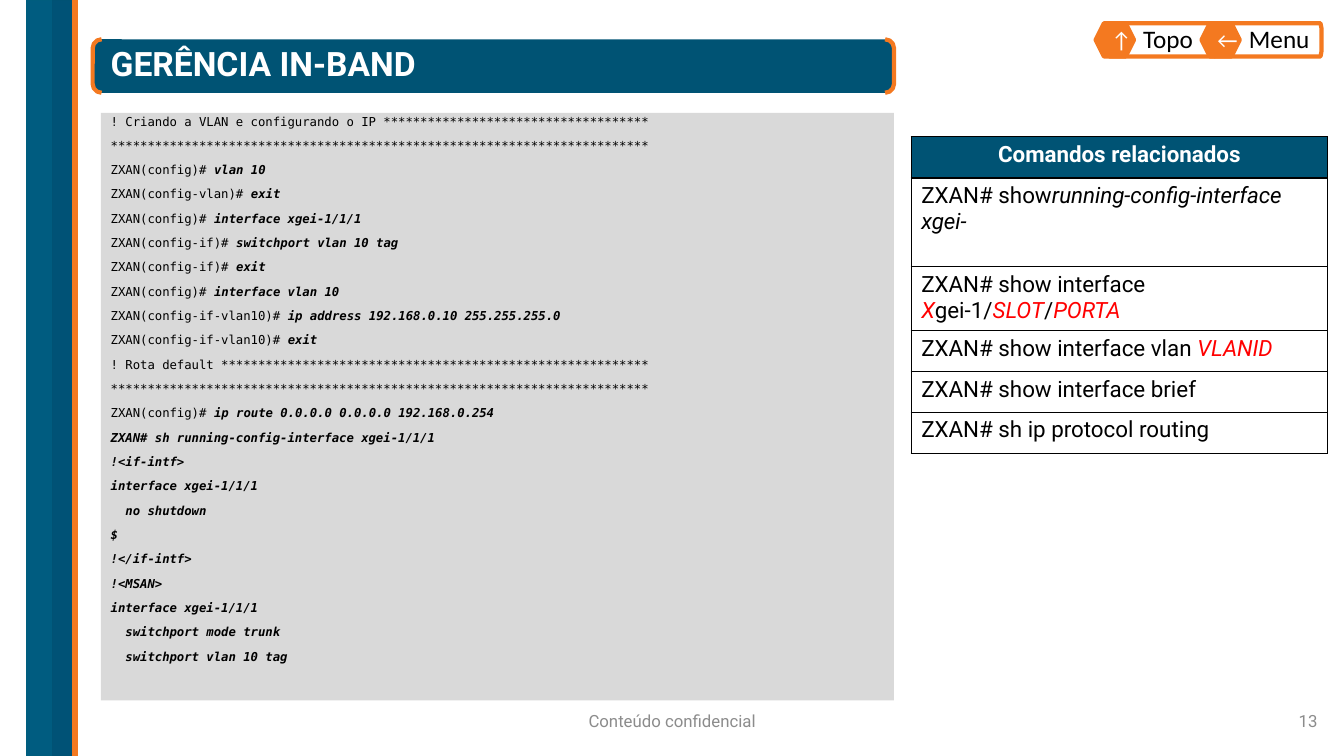
from lxml.etree import SubElement
from pptx import Presentation
from pptx.dml.color import RGBColor
from pptx.enum.shapes import MSO_SHAPE
from pptx.enum.text import MSO_ANCHOR, PP_ALIGN
from pptx.oxml.ns import qn
from pptx.util import Pt

BLUE, ORANGE, WHITE, BLACK = "005374", "F47920", "FFFFFF", "000000"
RED, GREY, PANEL = "FF0000", "8C8C8C", "D9D9D9"
EMPHASIS = {"bold": True, "italic": True}
VARIABLE = {"italic": True, "color": RED}
STAR_COLUMNS = 73

SESSION = [
    ("! Criando a VLAN e configurando o IP ".ljust(STAR_COLUMNS, "*"), ""),
    ("*" * STAR_COLUMNS, ""),
    ("ZXAN(config)# ", "vlan 10"),
    ("ZXAN(config-vlan)# ", "exit"),
    ("ZXAN(config)# ", "interface xgei-1/1/1"),
    ("ZXAN(config-if)# ", "switchport vlan 10 tag"),
    ("ZXAN(config-if)# ", "exit"),
    ("ZXAN(config)# ", "interface vlan 10"),
    ("ZXAN(config-if-vlan10)# ", "ip address 192.168.0.10 255.255.255.0"),
    ("ZXAN(config-if-vlan10)# ", "exit"),
    ("! Rota default ".ljust(STAR_COLUMNS, "*"), ""),
    ("*" * STAR_COLUMNS, ""),
    ("ZXAN(config)# ", "ip route 0.0.0.0 0.0.0.0 192.168.0.254"),
    ("", "ZXAN# sh running-config-interface xgei-1/1/1"),
    ("", "!<if-intf>"),
    ("", "interface xgei-1/1/1"),
    ("", "  no shutdown"),
    ("", "$"),
    ("", "!</if-intf>"),
    ("", "!<MSAN>"),
    ("", "interface xgei-1/1/1"),
    ("", "  switchport mode trunk"),
    ("", "  switchport vlan 10 tag"),
]

# Row height, then the spans of the command
COMMANDS = [
    (63.4, [("ZXAN# show", {}), ("running-config-interface xgei-", {"italic": True})]),
    (44.6, [("ZXAN# show interface ", {}), ("X", VARIABLE), ("gei-1/", {}),
            ("SLOT", VARIABLE), ("/", {}), ("PORTA", VARIABLE)]),
    (29.2, [("ZXAN# show interface vlan ", {}), ("VLANID", VARIABLE)]),
    (29.2, [("ZXAN# show interface brief", {})]),
    (29.2, [("ZXAN# sh ip protocol routing", {})]),
]


def rgb(code):
    return RGBColor.from_string(code)


def apply(target, values):
    for name, value in values.items():
        setattr(target, name, value)


def paint(shape, fill, line=None, width=1):
    shape.shadow.inherit = False
    shape.fill.solid()
    shape.fill.fore_color.rgb = rgb(fill)
    if line:
        shape.line.color.rgb = rgb(line)
        shape.line.width = Pt(width)
    else:
        shape.line.fill.background()


def add_shape(page, kind, box, *colours):
    shape = page.shapes.add_shape(kind, *map(Pt, box))
    paint(shape, *colours)
    return shape


def write(para, spans, base, **layout):
    """Fill a paragraph with (text, format) spans on top of a base format."""
    apply(para, layout)
    for text, changes in spans:
        values = {**base, **changes}
        span = para.add_run()
        span.text = text
        span.font.color.rgb = rgb(values.pop("color"))
        apply(span.font, values)


def font(name, size, color, **extra):
    return {"name": name, "size": Pt(size), "color": color, **extra}


def add_label(page, box, text, base, **layout):
    frame = page.shapes.add_textbox(*map(Pt, box)).text_frame
    apply(frame, {"word_wrap": True, "vertical_anchor": MSO_ANCHOR.MIDDLE})
    write(frame.paragraphs[0], [(text, {})], base, **layout)


def side_stripes(page, height):
    for left, width, fill, line in [(19.4, 32.4, "005C80", "005D7E"),
                                    (37.4, 14.4, "005276", "005274"),
                                    (51.8, 3.6, ORANGE, ORANGE)]:
        add_shape(page, MSO_SHAPE.RECTANGLE, (left, 0, width, height), fill, line)


def title_bar(page, left, top, width, height):
    add_shape(page, MSO_SHAPE.DOUBLE_BRACKET, (left, top, width, height), BLUE, ORANGE, 3)
    add_label(page, (left + 5.8, top, width - 5.8, height), "GERÊNCIA IN-BAND",
              font("Roboto", 24, WHITE, bold=True), line_spacing=0.9)


def nav_button(page, left, top, width, height, arrow, name):
    """Draw a tab with rounded right corners and a hexagon over its left end."""
    right, bottom, bevel = left + width, top + height, 3.6
    outline = [(right, top + bevel), (right, bottom - bevel), (right - 0.7, bottom),
               (left, bottom), (left, top), (right - 0.7, top)]
    points = [(Pt(x), Pt(y)) for x, y in outline]
    builder = page.shapes.build_freeform(*points[0])
    builder.add_line_segments(points[1:], close=True)
    tab = builder.convert_to_shape()
    paint(tab, WHITE, ORANGE, 3)
    colour = tab.fill._xPr.find(qn("a:solidFill"))[0]
    SubElement(colour, qn("a:alpha"), val="90000")
    apply(tab.text_frame, {"margin_left": Pt(23.8), "margin_right": Pt(5),
                           "margin_top": Pt(5), "margin_bottom": Pt(5),
                           "word_wrap": True, "vertical_anchor": MSO_ANCHOR.MIDDLE})
    write(tab.text_frame.paragraphs[0], [(name, {})], font("Calibri", 18, BLACK),
          alignment=PP_ALIGN.LEFT, line_spacing=0.9)

    badge = add_shape(page, MSO_SHAPE.HEXAGON, (left - 10.1, top, 27.4, height),
                      ORANGE, ORANGE, 3)
    badge.text_frame.vertical_anchor = MSO_ANCHOR.MIDDLE
    write(badge.text_frame.paragraphs[0], [(arrow, {})], font("Calibri", 16, WHITE),
          alignment=PP_ALIGN.CENTER)


def navigation(page, left, top, width, height):
    buttons = [("↑", "Topo"), ("←", "Menu")]
    step = width / len(buttons)
    for index, (arrow, name) in enumerate(buttons):
        nav_button(page, left + index * step, top, step, height, arrow, name)


def session_panel(page, *box):
    panel = add_shape(page, MSO_SHAPE.RECTANGLE, box, PANEL)
    frame = panel.text_frame
    frame.vertical_anchor = MSO_ANCHOR.TOP
    for index, (prompt, command) in enumerate(SESSION):
        para = frame.add_paragraph() if index else frame.paragraphs[0]
        spans = [span for span in [(prompt, {}), (command, EMPHASIS)] if span[0]]
        write(para, spans, font("DejaVu Sans Mono", 8.8, BLACK), alignment=PP_ALIGN.LEFT,
              line_spacing=0.7, space_before=Pt(10 if index else 0))


def fill_cell(cell, fill, spans, base, **layout):
    properties = cell._tc.get_or_add_tcPr()
    for side in ("a:lnL", "a:lnR", "a:lnT", "a:lnB"):
        line = SubElement(properties, qn(side), w=str(Pt(1)))
        SubElement(SubElement(line, qn("a:solidFill")), qn("a:srgbClr"), val=BLACK)
    cell.fill.solid()
    cell.fill.fore_color.rgb = rgb(fill)
    write(cell.text_frame.paragraphs[0], spans, base, **layout)


def command_table(page, left, top, width):
    heights = [29.5] + [height for height, _ in COMMANDS]
    box = (left, top, width, sum(heights))
    table = page.shapes.add_table(len(heights), 1, *map(Pt, box)).table
    for row, height in zip(table.rows, heights):
        row.height = Pt(height)
    fill_cell(table.cell(0, 0), BLUE, [("Comandos relacionados", {})],
              font("Roboto", 16, WHITE, bold=True), alignment=PP_ALIGN.CENTER)
    for index, (_, spans) in enumerate(COMMANDS, 1):
        fill_cell(table.cell(index, 0), WHITE, spans,
                  font("Roboto", 16, BLACK, bold=False, italic=False))


def footer(page, top, height):
    small = font("Roboto", 12, GREY)
    add_label(page, (318.2, top, 324, height), "Conteúdo confidencial", small,
              alignment=PP_ALIGN.CENTER)
    add_label(page, (894.2, top, 54, height), "13", small, alignment=PP_ALIGN.RIGHT)


def main():
    deck = Presentation()
    apply(deck, {"slide_width": Pt(960), "slide_height": Pt(540)})
    page = deck.slides.add_slide(deck.slide_layouts[6])
    side_stripes(page, 540)
    title_bar(page, 66.2, 28.1, 572.4, 38.2)
    footer(page, 500.4, 28.8)
    navigation(page, 792.7, 16.6, 151.2, 23.8)
    session_panel(page, 72, 80.6, 566.6, 419.8)
    command_table(page, 650.9, 97.6, 297.4)
    deck.save("out.pptx")


if __name__ == "__main__":
    main()
